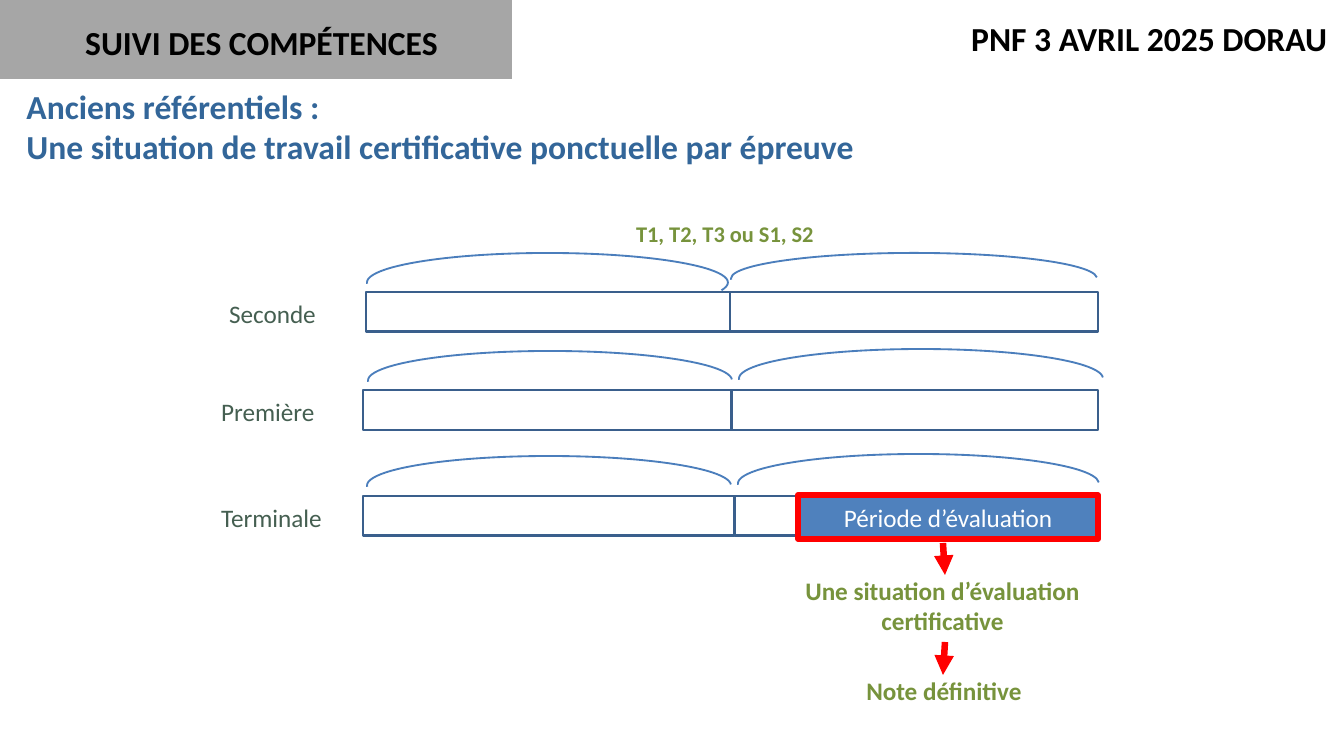
"""Build the slide on skills tracking under the former frameworks."""
from lxml import etree
from pptx import Presentation
from pptx import util as u
from pptx.dml.color import RGBColor
from pptx.enum import shapes, text
from pptx.oxml.ns import qn

PX = 914400 / 134.4
FONT = "Calibri"
COLORS = {
    "black": "000000", "white": "FFFFFF", "gray": "A6A6A6", "title": "336699",
    "bar": "3A5F8C", "arc": "4B7EBC", "label": "455F51", "green": "77933C",
    "period": "4F81BD", "red": "FF0000",
}
TITLE = ["Anciens référentiels :",
         "Une situation de travail certificative ponctuelle par épreuve"]
HEADER = "SUIVI DES COMPÉTENCES"
EVENT = "PNF 3 AVRIL 2025 DORAU"
BAR_HEIGHT = 40
ARC_START, ARC_END = 107.76, 215.8
YEARS = [
    {"name": "Seconde", "left": 216, "top": 292, "edges": (366, 730, 1098),
     "arcs": [(367, 253, 361, 59, 1.54), (731, 253, 366, 51, ARC_END)]},
    {"name": "Première", "left": 208, "top": 390, "edges": (363, 732, 1098),
     "arcs": [(368, 351, 364, 59, ARC_END), (739, 349, 364, 59, ARC_END)]},
    {"name": "Terminale", "left": 208, "top": 496, "edges": (363, 735, 1099),
     "arcs": [(367, 456, 364, 59, ARC_END), (738, 454, 361, 59, ARC_END)]},
]
PERIOD = ("Période d’évaluation", (798, 495, 300, 44))
NOTES = [
    ("T1, T2, T3 ou S1, S2", (595, 214, 260, 40), 12),
    ("Une situation d’évaluation certificative", (739, 569, 407, 75), 13.5),
    ("Note définitive", (827, 669, 234, 44), 13.5),
]
ARROWS = [(943, 543, 945, 575), (945, 642, 943, 675)]


def px(*values):
    return [u.Emu(round(value * PX)) for value in values]


def color(name):
    return RGBColor.from_string(COLORS[name])


def write(box, lines, size=13.5, ink="black", bold=False, align="LEFT", anchor="TOP"):
    frame = box.text_frame
    frame.word_wrap = True
    frame.auto_size = text.MSO_AUTO_SIZE.NONE
    frame.vertical_anchor = text.MSO_ANCHOR[anchor]
    frame.text = "\n".join(lines)
    for para in frame.paragraphs:
        para.alignment = text.PP_ALIGN[align]
        para.font.name = FONT
        para.font.size = u.Pt(size)
        para.font.bold = bold
        para.font.color.rgb = color(ink)


def add_text(page, words, place, **style):
    write(page.shapes.add_textbox(*px(*place)), [words], **style)


def add_shape(page, kind, place, fill=None, line=None, weight=1):
    shape = page.shapes.add_shape(shapes.MSO_SHAPE[kind], *px(*place))
    shape.shadow.inherit = False
    if fill:
        shape.fill.solid()
        shape.fill.fore_color.rgb = color(fill)
    else:
        shape.fill.background()
    if line:
        shape.line.color.rgb = color(line)
        shape.line.width = u.Pt(weight)
    else:
        shape.line.fill.background()
    return shape


def add_arrow(page, ends):
    arrow = page.shapes.add_connector(shapes.MSO_CONNECTOR.STRAIGHT, *px(*ends))
    arrow.line.color.rgb = color("red")
    arrow.line.width = u.Pt(3.5)
    etree.SubElement(arrow.line._get_or_add_ln(), qn("a:tailEnd"), type="triangle")
    etree.SubElement(arrow._element.spPr, qn("a:effectLst"))


def add_year(page, year):
    edges, top = year["edges"], year["top"]
    for left, right in zip(edges, edges[1:]):
        add_shape(page, "RECTANGLE", (left, top, right - left, BAR_HEIGHT),
                  "white", "bar", 1.5)
    add_text(page, year["name"], (year["left"], top, 150, 44), ink="label")
    for *place, end in year["arcs"]:
        arc = add_shape(page, "ARC", place, line="arc")
        arc.adjustments[0] = ARC_START
        arc.adjustments[1] = end


def main():
    deck = Presentation()
    deck.slide_width, deck.slide_height = px(1344, 756)
    page = deck.slides.add_slide(deck.slide_layouts[5])

    title = page.shapes.title
    title.left, title.top, title.width, title.height = px(13, 79, 1060, 95)
    write(title, TITLE, size=18, ink="title", bold=True)

    add_shape(page, "RECTANGLE", (0, 0, 512, 79), "gray")
    add_text(page, HEADER, (-75, 15, 673, 54), size=18, bold=True, align="CENTER")
    add_text(page, EVENT, (958, 11, 386, 54), size=18, bold=True)

    for year in YEARS:
        add_year(page, year)
    words, place = PERIOD
    period = add_shape(page, "RECTANGLE", place, "period", "red", 3)
    write(period, [words], ink="white", align="CENTER", anchor="MIDDLE")
    for words, place, size in NOTES:
        add_text(page, words, place, size=size, ink="green", bold=True, align="CENTER")
    for ends in ARROWS:
        add_arrow(page, ends)

    deck.save("out.pptx")


if __name__ == "__main__":
    main()
